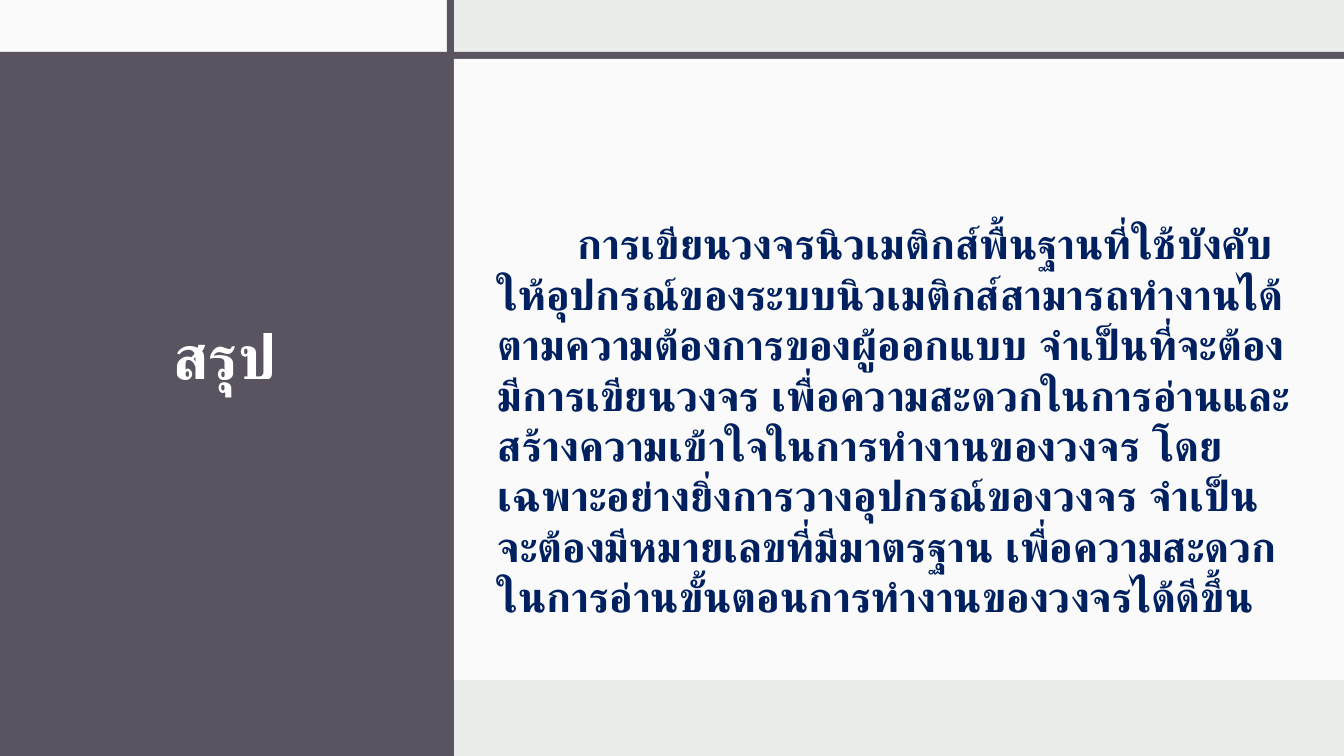
"""Build the summary slide on drawing pneumatic circuits."""
import dataclasses

import lxml.etree
import pptx
import pptx.dml.color
import pptx.enum.lang
import pptx.enum.shapes
import pptx.enum.text
import pptx.oxml.ns
import pptx.util

SLIDE_WIDTH, SLIDE_HEIGHT = 1344, 756
EMU_PER_PX = 914400 / 100.8


@dataclasses.dataclass(frozen=True)
class Theme:
    """Hold the colours, font and type sizes."""
    backdrop: str = "EBEDEB"
    plum: str = "595460"
    white: str = "FFFFFF"
    navy: str = "002060"
    font: str = "Arial"
    title_size: int = 44
    body_size: int = 30


THEME = Theme()
TITLE = "สรุป"
SUMMARY = (
    "การเขียนวงจรนิวเมติกส์พื้นฐานที่ใช้บังคับให้อุปกรณ์ของระบบนิวเมติกส์"
    "สามารถทำงานได้ตามความต้องการของผู้ออกแบบ จำเป็นที่จะต้องมีการเขียนวงจร "
    "เพื่อความสะดวกในการอ่านและสร้างความเข้าใจในการทำงานของวงจร "
    "โดยเฉพาะอย่างยิ่งการวางอุปกรณ์ของวงจร จำเป็นจะต้องมีหมายเลขที่มีมาตรฐาน "
    "เพื่อความสะดวกในการอ่านขั้นตอนการทำงานของวงจรได้ดีขึ้น"
)


def px(length):
    """Turn pixels into EMU."""
    return pptx.util.Emu(round(length * EMU_PER_PX))


def rgb(value):
    """Turn a hex string into a colour."""
    return pptx.dml.color.RGBColor.from_string(value)


def add_panel(page, left, top, width, height, color, opacity=100):
    """Add a borderless rectangle, opaque unless told otherwise."""
    panel = page.shapes.add_shape(
        pptx.enum.shapes.MSO_SHAPE.RECTANGLE,
        px(left), px(top), px(width), px(height))
    panel.shadow.inherit = False
    panel.line.fill.background()
    panel.fill.solid()
    panel.fill.fore_color.rgb = rgb(color)
    if opacity < 100:
        qualified = pptx.oxml.ns.qn
        tint = panel.fill._xPr.find(".//" + qualified("a:srgbClr"))
        alpha = lxml.etree.SubElement(tint, qualified("a:alpha"))
        alpha.set("val", str(opacity * 1000))
    return panel


def add_text(page, text, left, top, width, height, *, size, color,
             align=None, indent=0):
    """Add a bold Thai paragraph in a wrapping text box."""
    box = page.shapes.add_textbox(px(left), px(top), px(width), px(height))
    frame = box.text_frame
    frame.word_wrap = True
    frame.auto_size = pptx.enum.text.MSO_AUTO_SIZE.SHAPE_TO_FIT_TEXT
    para = frame.paragraphs[0]
    para.alignment = align
    if indent:
        properties = para._p.get_or_add_pPr()
        properties.set("marL", "0")
        properties.set("indent", str(px(indent)))
    span = para.add_run()
    span.text = text
    span.font.size = pptx.util.Pt(size)
    span.font.bold = True
    span.font.color.rgb = rgb(color)
    span.font.name = THEME.font
    span.font.language_id = pptx.enum.lang.MSO_LANGUAGE_ID.THAI
    complex_script = lxml.etree.SubElement(
        span._r.get_or_add_rPr(), pptx.oxml.ns.qn("a:cs"))
    complex_script.set("typeface", THEME.font)
    return box


def main():
    """Assemble and save the deck."""
    deck = pptx.Presentation()
    deck.slide_width, deck.slide_height = px(SLIDE_WIDTH), px(SLIDE_HEIGHT)
    page = deck.slides.add_slide(deck.slide_layouts[6])
    page.background.fill.solid()
    page.background.fill.fore_color.rgb = rgb(THEME.backdrop)

    add_panel(page, 0, 0, SLIDE_WIDTH, SLIDE_HEIGHT, THEME.backdrop)
    add_panel(page, 0, 52, 447, SLIDE_HEIGHT - 52, THEME.plum)
    add_panel(page, 0, 0, 451, 55, THEME.white, opacity=75)
    add_panel(page, 447, 0, 7, SLIDE_HEIGHT, THEME.plum)
    add_panel(page, 0, 52, SLIDE_WIDTH, 7, THEME.plum)
    add_panel(page, 454, 59, SLIDE_WIDTH - 454, 621, THEME.white, opacity=75)

    add_text(page, TITLE, 118, 313, 214, 85, size=THEME.title_size,
             color=THEME.white, align=pptx.enum.text.PP_ALIGN.CENTER)
    add_text(page, SUMMARY, 488, 213, 815, 315, size=THEME.body_size,
             color=THEME.navy, indent=80)
    deck.save("out.pptx")


if __name__ == "__main__":
    main()
